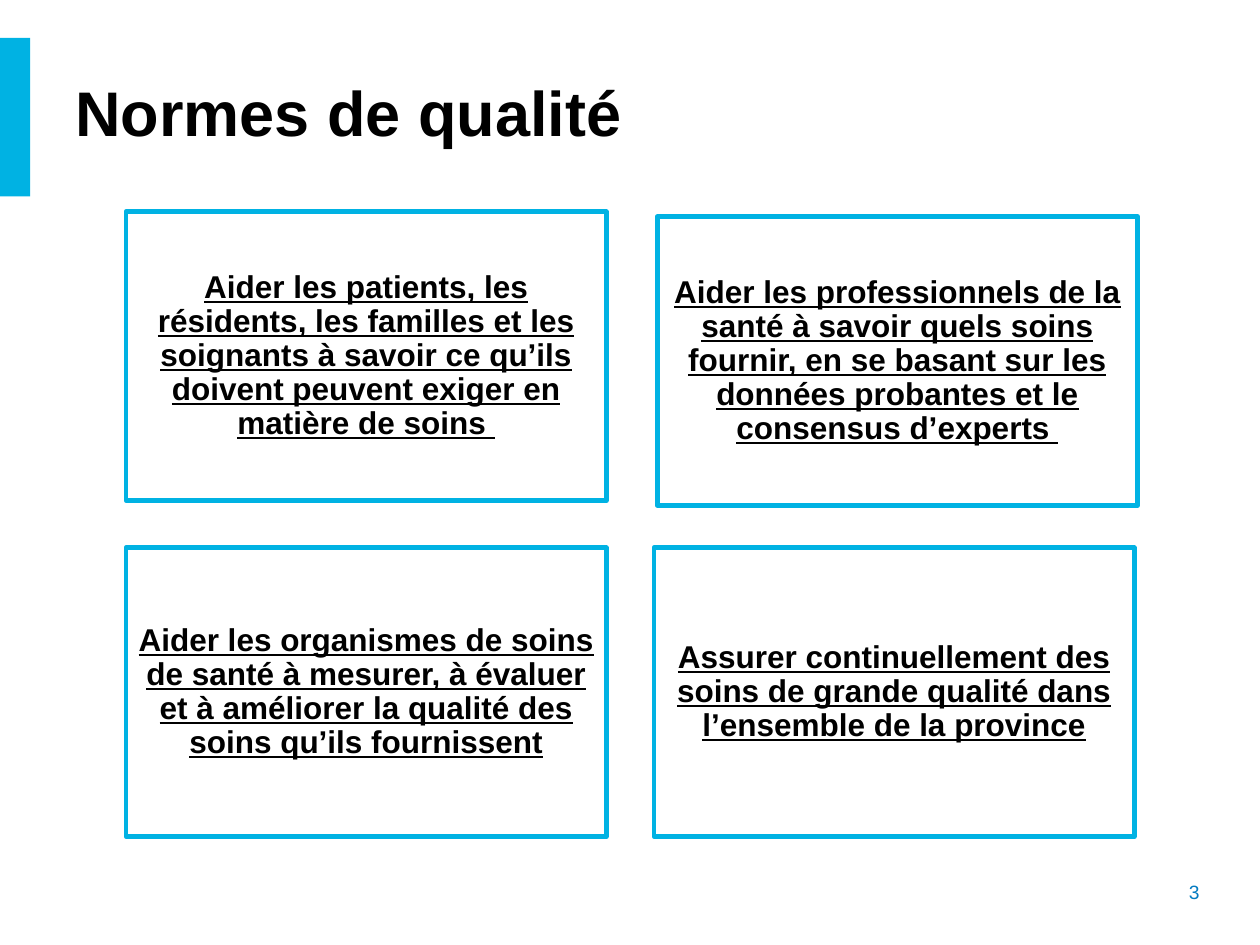
from dataclasses import dataclass

from pptx import Presentation
from pptx.dml.color import RGBColor
from pptx.enum import shapes, text
from pptx.util import Pt


@dataclass(frozen=True)
class Theme:
    font: str = "Arial"
    ink: str = "000000"
    cyan: str = "00B2E3"
    blue: str = "047BC1"
    head: float = 36
    body: float = 18
    note: float = 11
    edge: float = 2.75


class Page:
    def __init__(self, deck, theme):
        self.theme = theme
        self.slide = deck.slides.add_slide(deck.slide_layouts[6])

    def rect(self, box):
        form = self.slide.shapes.add_shape(
            shapes.MSO_SHAPE.RECTANGLE, *map(Pt, box))
        form.shadow.inherit = False
        return form

    def bar(self, box):
        form = self.rect(box)
        form.fill.solid()
        form.fill.fore_color.rgb = RGBColor.from_string(self.theme.cyan)
        form.line.fill.background()

    def letter(self, form, runs, size, color, align, inset=None):
        """Fill a shape with one paragraph of (words, bold, underline) runs."""
        frame = form.text_frame
        frame.word_wrap = True
        frame.vertical_anchor = text.MSO_ANCHOR.MIDDLE
        if inset is not None:
            frame.margin_left = frame.margin_right = Pt(inset)
            frame.margin_top = frame.margin_bottom = Pt(inset)
        para = frame.paragraphs[0]
        para.alignment = align
        for words, bold, under in runs:
            run = para.add_run()
            run.text = words
            font = run.font
            font.name, font.size = self.theme.font, Pt(size)
            font.bold, font.underline = bold, under
            font.color.rgb = RGBColor.from_string(color)
        return para

    def label(self, box, words, size, color, align, bold=False):
        form = self.slide.shapes.add_textbox(*map(Pt, box))
        self.letter(form, [(words, bold, False)], size, color, align)

    def card(self, box, runs):
        form = self.rect(box)
        form.fill.background()
        form.line.color.rgb = RGBColor.from_string(self.theme.cyan)
        form.line.width = Pt(self.theme.edge)
        para = self.letter(form, runs, self.theme.body, self.theme.ink,
                           text.PP_ALIGN.CENTER, inset=5)
        para.line_spacing = 0.9


CARD = (274.5, 165)
GOALS = [
    ((72, 121), [("Aider les patients, les résidents, les familles et les "
                  "soignants à savoir ce qu’ils doivent peuvent exiger en "
                  "matière de soins ", True, True)]),
    ((375.6, 123.8), [("Aider les professionnels de la santé à savoir quels "
                       "soins fournir, en se basant sur les données probantes "
                       "et le consensus d’experts", True, True),
                      (" ", False, True)]),
    ((72, 313), [("Aider les organismes de soins de santé à mesurer, à "
                  "évaluer et à améliorer la qualité des soins qu’ils "
                  "fournissent", True, True)]),
    ((373.7, 313), [("Assurer continuellement des soins de grande qualité "
                     "dans l’ensemble de la province", True, True)]),
]


def main():
    deck = Presentation()
    deck.slide_width, deck.slide_height = Pt(720), Pt(540)
    theme = Theme()
    page = Page(deck, theme)
    page.label((608.4, 499, 84.2, 21), "3", theme.note, theme.blue,
               text.PP_ALIGN.RIGHT)
    page.bar((0, 21.6, 17.3, 90.7))
    page.label((36, 36, 562.3, 55.4), "Normes de qualité", theme.head,
               theme.ink, text.PP_ALIGN.LEFT, bold=True)
    for spot, runs in GOALS:
        page.card(spot + CARD, runs)
    deck.save("out.pptx")


if __name__ == "__main__":
    main()
